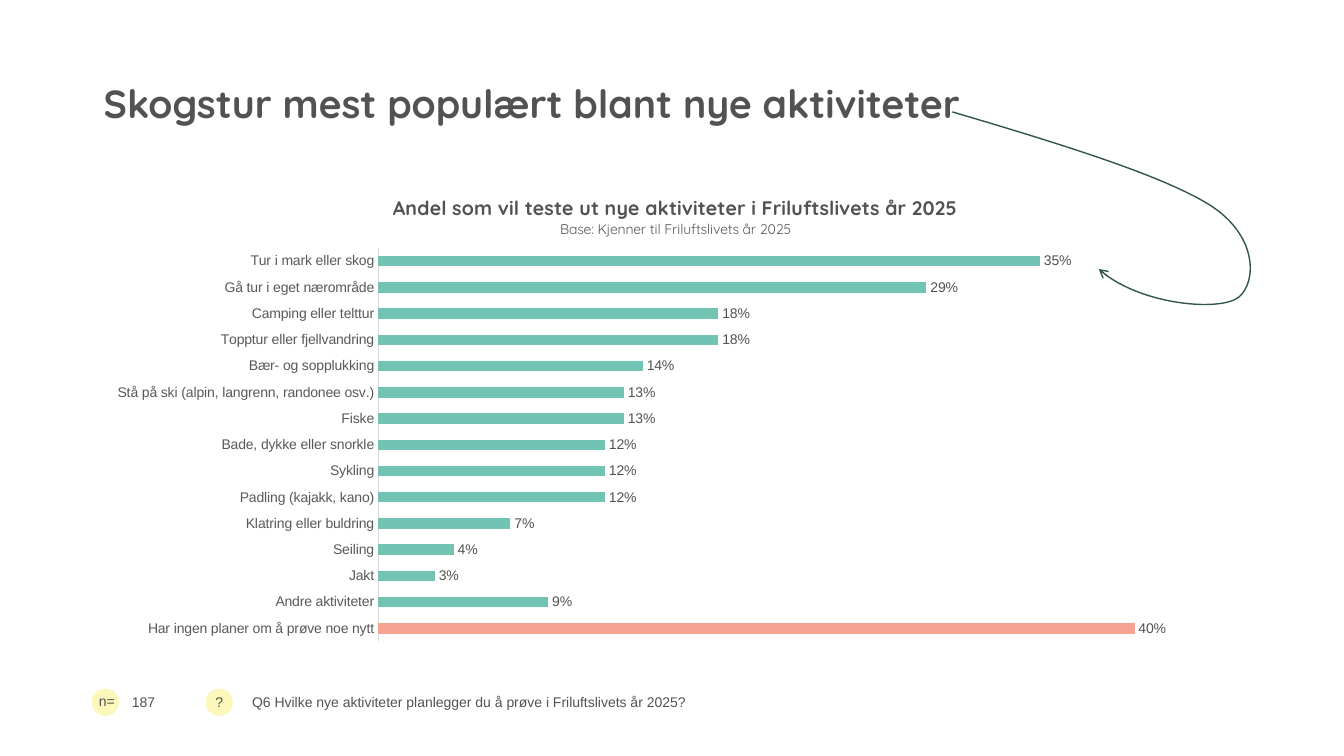
import pptx
import pptx.chart.data
import pptx.dml.color
import pptx.enum.chart
import pptx.enum.shapes
import pptx.enum.text
import pptx.oxml
import pptx.oxml.ns
import pptx.util

Cm, Pt = pptx.util.Cm, pptx.util.Pt
qn = pptx.oxml.ns.qn

# Content
TITLE = "Skogstur mest populært blant nye aktiviteter"
HEAD = "Andel som vil teste ut nye aktiviteter i Friluftslivets år 2025"
BASE = "Base: Kjenner til Friluftslivets år 2025"
ASK = "Q6 Hvilke nye aktiviteter planlegger du å prøve i Friluftslivets år 2025?"
COUNT = "187"
SHARES = {
    "Tur i mark eller skog": 0.35,
    "Gå tur i eget nærområde": 0.29,
    "Camping eller telttur": 0.18,
    "Topptur eller fjellvandring": 0.18,
    "Bær- og sopplukking": 0.14,
    "Stå på ski (alpin, langrenn, randonee osv.)": 0.13,
    "Fiske": 0.13,
    "Bade, dykke eller snorkle": 0.12,
    "Sykling": 0.12,
    "Padling (kajakk, kano)": 0.12,
    "Klatring eller buldring": 0.07,
    "Seiling": 0.04,
    "Jakt": 0.03,
    "Andre aktiviteter": 0.09,
    "Har ingen planer om å prøve noe nytt": 0.4,
}
# Badge: text, circle left, text box (left, top, width, height)
BADGES = [
    ("n=", 2.31, (2.24, 17.32, 1.14, 0.69)),
    ("?", 5.18, (5.18, 17.35, 0.64, 0.69)),
]
# Start point, then three points for each Bezier piece, in cm
CURVE = [
    (24, 2.82),
    (26.67, 3.61), (29.31, 4.42), (30.51, 5.18),
    (31.72, 5.97), (31.65, 7.11), (31.24, 7.47),
    (30.84, 7.85), (28.7, 7.7), (27.69, 6.78),
]
REACH = (31.5, 7.67)  # right and bottom of the drawn curve

GREY, GREEN, CORAL = "515350", "71C3B3", "F7A392"
YELLOW, PINE, AXIS, LABEL = "FCF7BA", "32554E", "D9D9D9", "595959"


def tint(color, code):
    color.rgb = pptx.dml.color.RGBColor.from_string(code)


def fill(part, code):
    part.fill.solid()
    tint(part.fill.fore_color, code)


def style(font, size, name="Arial", code=GREY, bold=False):
    font.size, font.name, font.bold = Pt(size), name, bold
    tint(font.color, code)


def move(shape, left, top, width, height):
    shape.left, shape.top = Cm(left), Cm(top)
    shape.width, shape.height = Cm(width), Cm(height)


def node(parent, tag, **attrs):
    child = pptx.oxml.parse_xml(f"<{tag} {pptx.oxml.ns.nsdecls(tag[0])}/>")
    for key, val in attrs.items():
        child.set(key, str(val))
    parent.append(child)
    return child


def layout(parent, index, **sides):
    for old in parent.findall(qn("c:layout")):
        parent.remove(old)
    box = node(parent, "c:layout")
    parent.insert(index, box)
    manual = node(box, "c:manualLayout")
    for tag, val in sides.items():
        node(manual, "c:" + tag, val=val)


prs = pptx.Presentation()
prs.slide_width, prs.slide_height = Cm(33.87), Cm(19.05)
slide = prs.slides.add_slide(prs.slide_layouts[3])
shapes = slide.shapes
title, ask, count = slide.placeholders

# Badges
for text, left, box in BADGES:
    disc = shapes.add_shape(pptx.enum.shapes.MSO_SHAPE.OVAL,
                            Cm(left), Cm(17.35), Cm(0.69), Cm(0.69))
    disc.shadow.inherit = False
    fill(disc, YELLOW)
    disc.line.fill.background()
    frame = shapes.add_textbox(*map(Cm, box)).text_frame
    frame.word_wrap = True
    frame.text = text
    style(frame.paragraphs[0].font, 10)

# Title
move(title, 2.36, 0.99, 29.26, 2.34)
title.text_frame.text = TITLE
title.text_frame.vertical_anchor = pptx.enum.text.MSO_ANCHOR.BOTTOM
par = title.text_frame.paragraphs[0]
par.alignment = pptx.enum.text.PP_ALIGN.LEFT
par.line_spacing = 0.9
style(par.font, 28, "Quicksand", bold=True)

# Question and sample size
for holder, text, box in [(ask, ASK, (6.1, 16.94, 25.53, 1.47)),
                          (count, COUNT, (3.07, 17.35, 1.88, 0.69))]:
    move(holder, *box)
    holder.text_frame.text = text
    holder.text_frame.vertical_anchor = pptx.enum.text.MSO_ANCHOR.MIDDLE
    par = holder.text_frame.paragraphs[0]
    par.space_before = Pt(0)
    props = par._p.get_or_add_pPr()
    props.set("marL", "0")
    props.set("indent", "0")
    node(props, "a:buNone")
    style(par.font, 10)

# Chart
data = pptx.chart.data.CategoryChartData(number_format="0%")
data.categories = list(SHARES)
data.add_series("Series 1", list(SHARES.values()))
chart = shapes.add_chart(pptx.enum.chart.XL_CHART_TYPE.BAR_CLUSTERED,
                         Cm(2.36), Cm(4.32), Cm(29.26), Cm(12.09), data).chart
chart.has_legend = False
style(chart.font, 10)

frame = chart.chart_title.text_frame
frame.text = HEAD
frame.add_paragraph().text = BASE
for par, size, code, bold in zip(frame.paragraphs, (14, 10), (GREY, LABEL), (True, False)):
    style(par.font, size, "Quicksand", code, bold)
    for run in par.runs:
        style(run.font, size, "Quicksand", code, bold)
layout(chart.chart_title._element, 1, xMode="edge", yMode="edge", x=0.255, y=0.04)
layout(chart._chartSpace.chart.plotArea, 0, layoutTarget="inner", xMode="edge",
       yMode="edge", x=0.245, y=0.16, w=0.733, h=0.82)

cat, val = chart.category_axis, chart.value_axis
cat.reverse_order = True
cat.major_tick_mark = cat.minor_tick_mark = pptx.enum.chart.XL_TICK_MARK.NONE
tint(cat.format.line.color, AXIS)
cat.format.line.width = Pt(0.75)
style(cat.tick_labels.font, 10, code=LABEL)
val.visible = val.has_major_gridlines = False
val.minimum_scale, val.maximum_scale = 0, 0.45

plot = chart.plots[0]
plot.gap_width, plot.vary_by_categories = 150, False
bars = plot.series[0]
fill(bars.format, GREEN)
fill(bars.points[len(SHARES) - 1].format, CORAL)
labels = bars.data_labels
labels.show_value = True
labels.number_format, labels.number_format_is_linked = "0%", False
labels.position = pptx.enum.chart.XL_LABEL_POSITION.OUTSIDE_END
style(labels.font, 10)

# Curved arrow
dots = [(Cm(x), Cm(y)) for x, y in CURVE]
pen = shapes.build_freeform(*dots[0])
pen.add_line_segments(dots[1:], close=False)
arrow = pen.convert_to_shape()
arrow.shadow.inherit = False
arrow.fill.background()
tint(arrow.line.color, PINE)
arrow.line.width = Pt(1)
node(arrow.line._get_or_add_ln(), "a:tailEnd", type="arrow")

trace = next(arrow._element.iter(qn("a:path")))
steps = trace.findall(qn("a:lnTo"))
for i in range(0, len(steps), 3):
    bend = node(trace, "a:cubicBezTo")
    for step in steps[i:i + 3]:
        bend.append(step[0])
        trace.remove(step)
arrow.width, arrow.height = (Cm(end) - dot for end, dot in zip(REACH, dots[0]))
trace.set("w", str(arrow.width))
trace.set("h", str(arrow.height))

prs.save("out.pptx")
